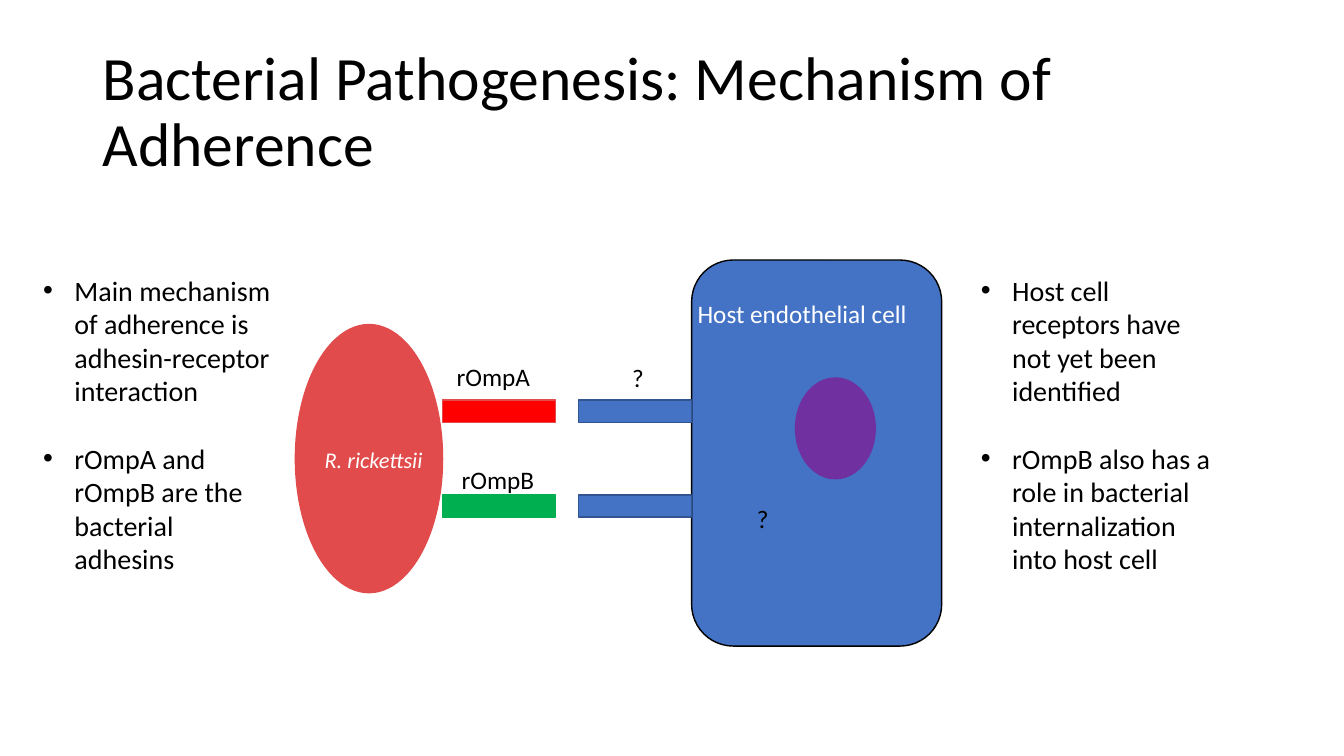
from dataclasses import dataclass

import pptx
import pptx.dml.color
import pptx.enum.shapes
import pptx.enum.text
import pptx.oxml.xmlchemy
import pptx.slide
import pptx.text.text
import pptx.util
from lxml import etree

EMU_PER_PX = 9144  # 100 px to the inch
FONT = "Calibri"
BLACK, WHITE = "000000", "FFFFFF"
BACTERIUM, HOST, HOST_EDGE = "E14B4B", "4472C4", "325491"
RED, GREEN, PURPLE = "FF0000", "00B050", "7030A0"
BULLET_INDENT = 31
KIND = pptx.enum.shapes.MSO_SHAPE


@dataclass(frozen=True)
class Box:
    left: int
    top: int
    width: int
    height: int


@dataclass(frozen=True)
class Part:
    kind: KIND
    box: Box
    fill: str
    line: str


@dataclass(frozen=True)
class Label:
    text: str
    box: Box
    size: int = 18
    color: str = BLACK
    italic: bool = False
    wrap: bool = True


@dataclass(frozen=True)
class BulletList:
    box: Box
    items: tuple[str, ...]


def px(length: int) -> pptx.util.Emu:
    return pptx.util.Emu(length * EMU_PER_PX)


def rgb(color: str) -> pptx.dml.color.RGBColor:
    return pptx.dml.color.RGBColor.from_string(color)


def place(box: Box) -> tuple[pptx.util.Emu, ...]:
    return px(box.left), px(box.top), px(box.width), px(box.height)


def draw_part(slide: pptx.slide.Slide, part: Part) -> None:
    shape = slide.shapes.add_shape(part.kind, *place(part.box))
    shape.shadow.inherit = False
    shape.fill.solid()
    shape.fill.fore_color.rgb = rgb(part.fill)
    shape.line.color.rgb = rgb(part.line)
    shape.line.width = pptx.util.Pt(1)


def add_frame(slide: pptx.slide.Slide, box: Box, wrap: bool = True) -> pptx.text.text.TextFrame:
    frame = slide.shapes.add_textbox(*place(box)).text_frame
    frame.word_wrap = wrap
    frame.auto_size = pptx.enum.text.MSO_AUTO_SIZE.SHAPE_TO_FIT_TEXT
    return frame


def add_run(paragraph: pptx.text.text._Paragraph, text: str, size: int,
            color: str = BLACK, italic: bool = False) -> None:
    run = paragraph.add_run()
    run.text = text
    run.font.name = FONT
    run.font.size = pptx.util.Pt(size)
    run.font.color.rgb = rgb(color)
    run.font.italic = italic


def draw_title(slide: pptx.slide.Slide, text: str, box: Box) -> None:
    frame = add_frame(slide, box)
    frame.auto_size = pptx.enum.text.MSO_AUTO_SIZE.NONE
    frame.vertical_anchor = pptx.enum.text.MSO_ANCHOR.MIDDLE
    frame.paragraphs[0].line_spacing = 0.9
    add_run(frame.paragraphs[0], text, 44)


def draw_label(slide: pptx.slide.Slide, label: Label) -> None:
    frame = add_frame(slide, label.box, label.wrap)
    add_run(frame.paragraphs[0], label.text, label.size, label.color, label.italic)


def draw_bullets(slide: pptx.slide.Slide, bullets: BulletList) -> None:
    frame = add_frame(slide, bullets.box)
    for index, item in enumerate(bullets.items):
        paragraph = frame.add_paragraph() if index else frame.paragraphs[0]
        if index:
            paragraph.space_before = pptx.util.Pt(24)
        properties = paragraph._p.get_or_add_pPr()
        properties.set("marL", str(px(BULLET_INDENT)))
        properties.set("indent", str(px(-BULLET_INDENT)))
        font = etree.SubElement(properties, pptx.oxml.ns.qn("a:buFont"))
        font.set("typeface", "Arial")
        bullet = etree.SubElement(properties, pptx.oxml.ns.qn("a:buChar"))
        bullet.set("char", "•")
        add_run(paragraph, item, 20)


# Cells, then adhesins facing their receptors
BAR_WIDTH, BAR_HEIGHT = 112, 22
ADHESIN_LEFT, RECEPTOR_LEFT = 439, 574
UPPER, LOWER = 397, 491

PARTS = [
    Part(KIND.OVAL, Box(293, 322, 146, 266), BACTERIUM, BACTERIUM),
    Part(KIND.ROUNDED_RECTANGLE, Box(686, 258, 248, 383), HOST, BLACK),
    Part(KIND.OVAL, Box(789, 375, 79, 100), PURPLE, PURPLE),
] + [
    Part(KIND.RECTANGLE, Box(left, top, BAR_WIDTH, BAR_HEIGHT), fill, line)
    for left, top, fill, line in (
        (ADHESIN_LEFT, UPPER, RED, BACTERIUM),
        (ADHESIN_LEFT, LOWER, GREEN, GREEN),
        (RECEPTOR_LEFT, UPPER, HOST, HOST_EDGE),
        (RECEPTOR_LEFT, LOWER, HOST, HOST_EDGE),
    )
]

LABELS = [
    Label("R. rickettsii", Box(312, 438, 128, 37), 16, WHITE, italic=True),
    Label("Host endothelial cell", Box(682, 291, 255, 40), color=WHITE),
    Label("rOmpA", Box(443, 354, 112, 40)),
    Label("rOmpB", Box(448, 456, 93, 40), wrap=False),
    Label("?", Box(617, 355, 32, 40), wrap=False),
    Label("?", Box(741, 494, 124, 40)),
]

BULLET_LISTS = [
    BulletList(Box(33, 266, 252, 343), (
        "Main mechanism of adherence is adhesin-receptor interaction",
        "rOmpA and rOmpB are the bacterial adhesins",
    )),
    BulletList(Box(963, 266, 248, 313), (
        "Host cell receptors have not yet been identified",
        "rOmpB also has a role in bacterial internalization into host cell",
    )),
]


def main() -> None:
    presentation = pptx.Presentation()
    presentation.slide_width = px(1333)
    presentation.slide_height = px(750)
    slide = presentation.slides.add_slide(presentation.slide_layouts[6])

    # Heading
    draw_title(slide, "Bacterial Pathogenesis: Mechanism of Adherence", Box(92, 40, 1150, 145))
    # Diagram
    for part in PARTS:
        draw_part(slide, part)
    for label in LABELS:
        draw_label(slide, label)
    # Side notes
    for bullets in BULLET_LISTS:
        draw_bullets(slide, bullets)

    presentation.save("out.pptx")


if __name__ == "__main__":
    main()
